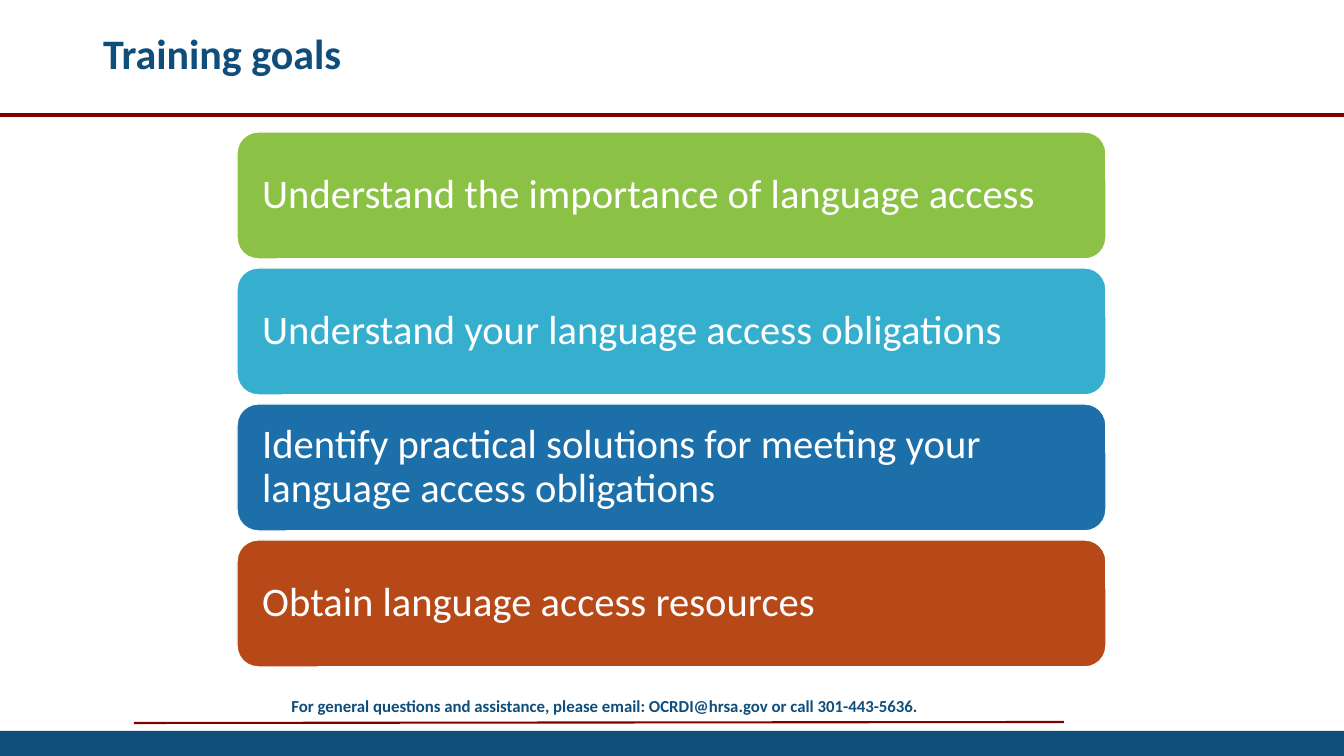
from lxml import etree
from pptx import Presentation
from pptx.dml.color import RGBColor
from pptx.enum.shapes import MSO_CONNECTOR, MSO_SHAPE
from pptx.enum.text import MSO_ANCHOR, MSO_AUTO_SIZE, PP_ALIGN
from pptx.oxml.ns import qn
from pptx.util import Pt

ROUNDED, RECTANGLE = MSO_SHAPE.ROUNDED_RECTANGLE, MSO_SHAPE.RECTANGLE
STRAIGHT = MSO_CONNECTOR.STRAIGHT
MIDDLE = MSO_ANCHOR.MIDDLE
NO_FIT = MSO_AUTO_SIZE.NONE
LEFT, CENTER = PP_ALIGN.LEFT, PP_ALIGN.CENTER

TITLE = "Training goals"
GOALS = [
    ("Understand the importance of language access", "8BC145"),
    ("Understand your language access obligations", "36AFCE"),
    ("Identify practical solutions for meeting your language access obligations", "1D6FA9"),
    ("Obtain language access resources", "B74919"),
]
CONTACT = "For general questions and assistance, please email: OCRDI@hrsa.gov or call 301-443-5636."
NAVY, MAROON, WHITE = "0F4D7B", "800000", "FFFFFF"
RULES = [
    ((134, 723, 1064, 722), 1.5),
    ((0, 115, 1344, 115), 3),
]

SLIDE_WIDTH, SLIDE_HEIGHT = 1344, 756
GOAL_LEFT, GOAL_TOP, GOAL_WIDTH, GOAL_HEIGHT, GOAL_PITCH = 237, 132, 869, 127, 136
GOAL_INSET = 19
BAND_HEIGHT = 25


def px(*lengths):
    return [round(length * 914400 / 100.8) for length in lengths]


def color(hex_code):
    return RGBColor.from_string(hex_code)


def write(frame, wording, size, hex_code, bold=False, align=LEFT, spacing=1.0):
    frame.text = wording
    frame.word_wrap = True
    frame.auto_size = NO_FIT
    frame.vertical_anchor = MIDDLE
    paragraph = frame.paragraphs[0]
    paragraph.alignment = align
    paragraph.line_spacing = spacing
    font = paragraph.runs[0].font
    font.name = "Calibri"
    font.size = Pt(size)
    font.bold = bold
    font.color.rgb = color(hex_code)


def add_block(slide, preset, box, hex_code):
    block = slide.shapes.add_shape(preset, *px(*box))
    block.shadow.inherit = False
    block.fill.solid()
    block.fill.fore_color.rgb = color(hex_code)
    block.line.fill.background()
    return block


def add_rule(slide, ends, weight):
    rule = slide.shapes.add_connector(STRAIGHT, *px(*ends))
    rule.line.color.rgb = color(MAROON)
    rule.line.width = Pt(weight)
    etree.SubElement(rule._element.spPr, qn("a:effectLst"))


def add_goal(slide, row, wording, hex_code):
    box = (GOAL_LEFT, GOAL_TOP + row * GOAL_PITCH, GOAL_WIDTH, GOAL_HEIGHT)
    goal = add_block(slide, ROUNDED, box, hex_code)
    goal.line.color.rgb = color(WHITE)
    goal.line.width = Pt(1)
    frame = goal.text_frame
    frame.margin_left, frame.margin_right = px(GOAL_INSET, GOAL_INSET)
    write(frame, wording, 29, WHITE, spacing=0.9)


def main():
    deck = Presentation()
    deck.slide_width, deck.slide_height = px(SLIDE_WIDTH, SLIDE_HEIGHT)
    slide = deck.slides.add_slide(deck.slide_layouts[5])

    title = slide.shapes.title
    title.left, title.top, title.width, title.height = px(93, -17, 1159, 146)
    write(title.text_frame, TITLE, 30, NAVY, bold=True, spacing=0.9)

    for ends, weight in RULES:
        add_rule(slide, ends, weight)
    band_box = (0, SLIDE_HEIGHT - BAND_HEIGHT, SLIDE_WIDTH, BAND_HEIGHT)
    add_block(slide, RECTANGLE, band_box, NAVY)
    contact = slide.shapes.add_textbox(*px(168, 691, 874, 30))
    write(contact.text_frame, CONTACT, 12, NAVY, bold=True, align=CENTER)

    for row, (wording, hex_code) in enumerate(GOALS):
        add_goal(slide, row, wording, hex_code)

    deck.save("out.pptx")


if __name__ == "__main__":
    main()
